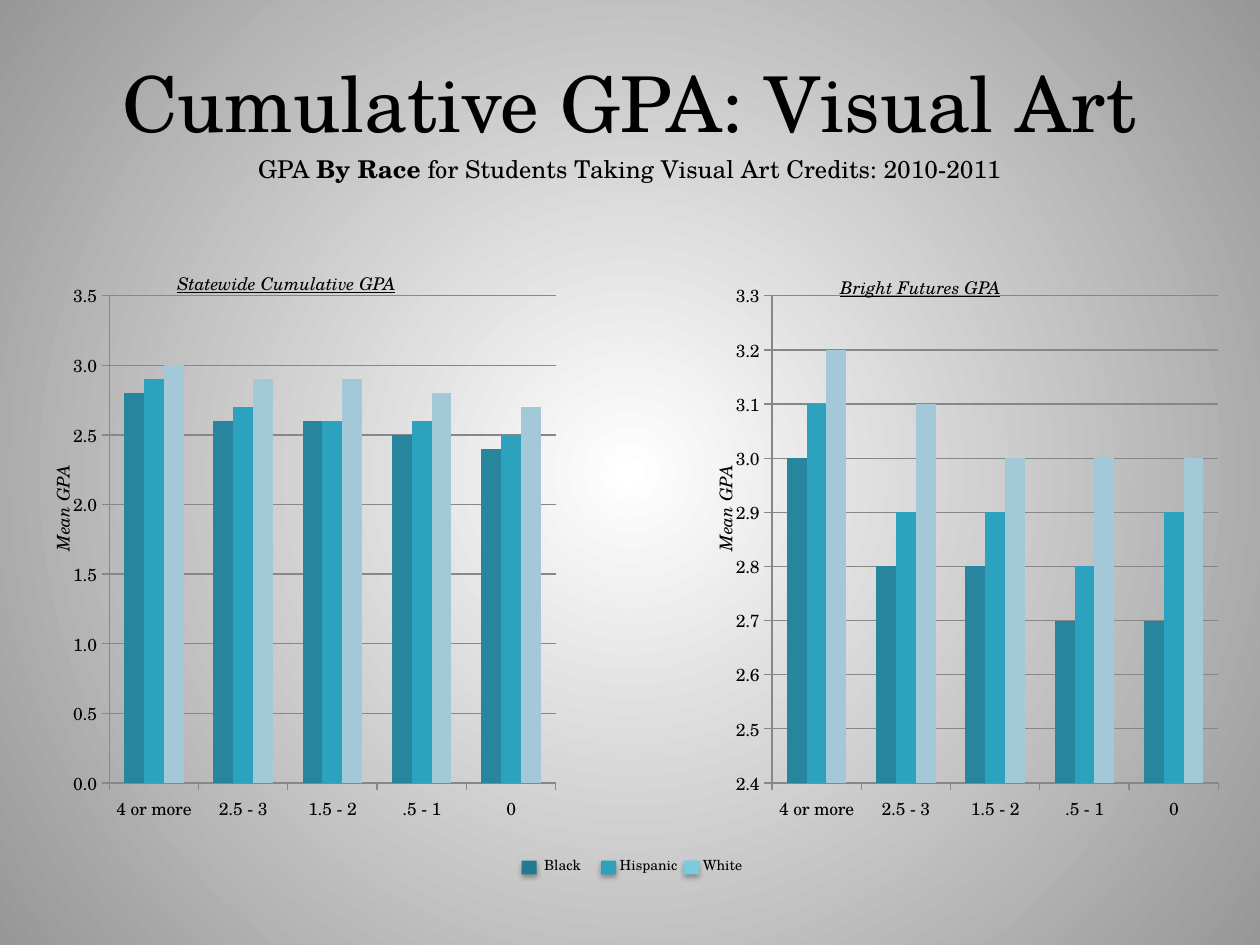
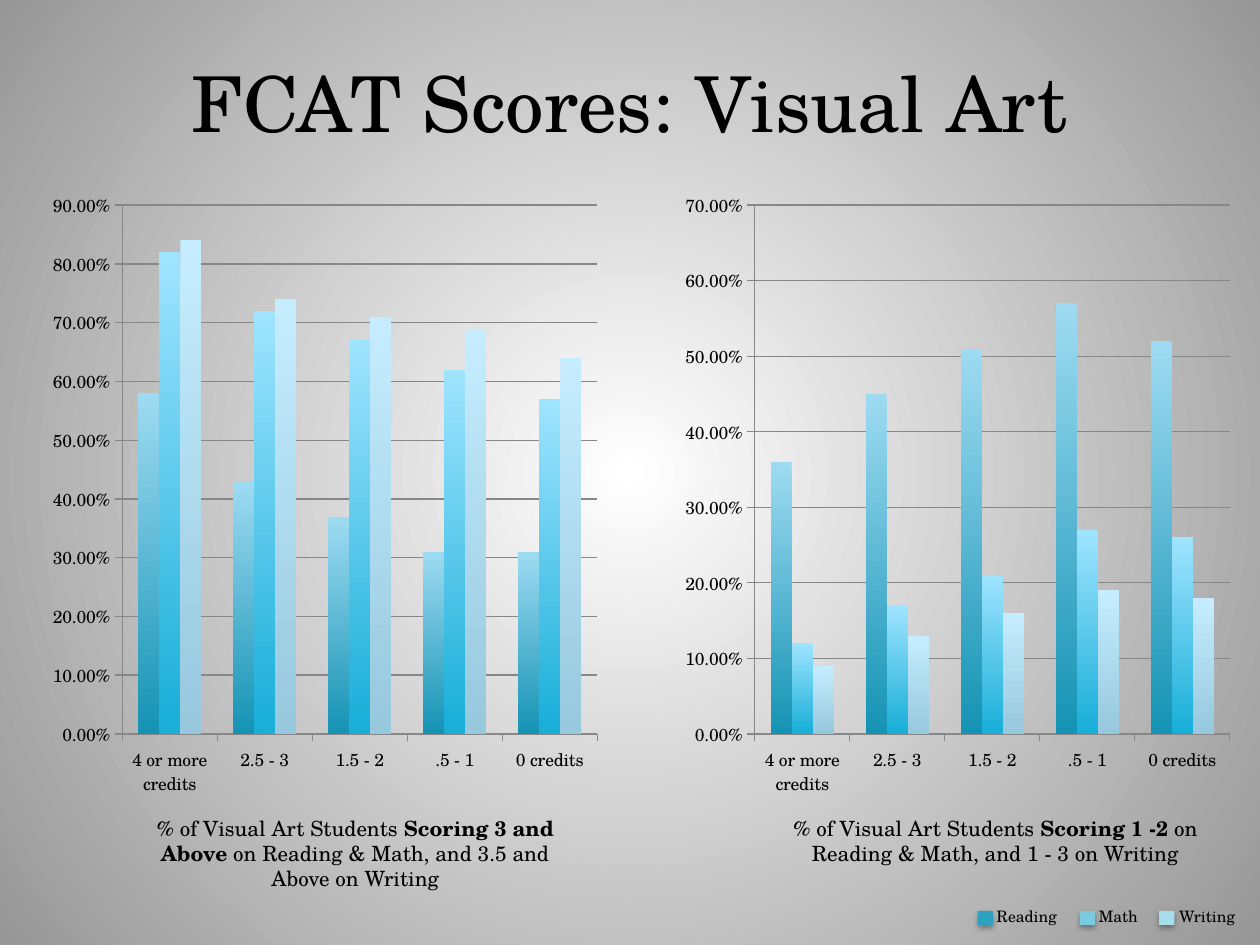
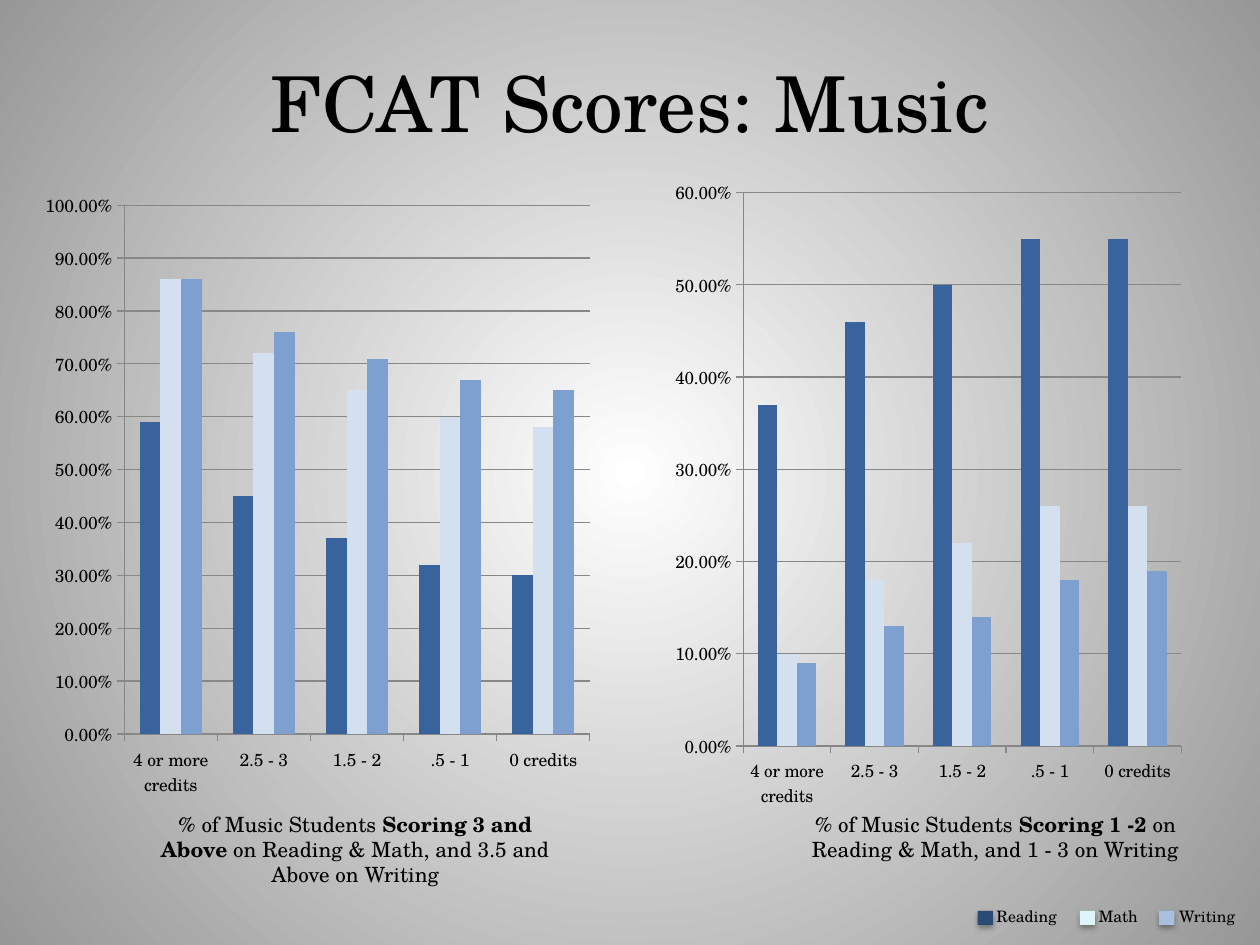
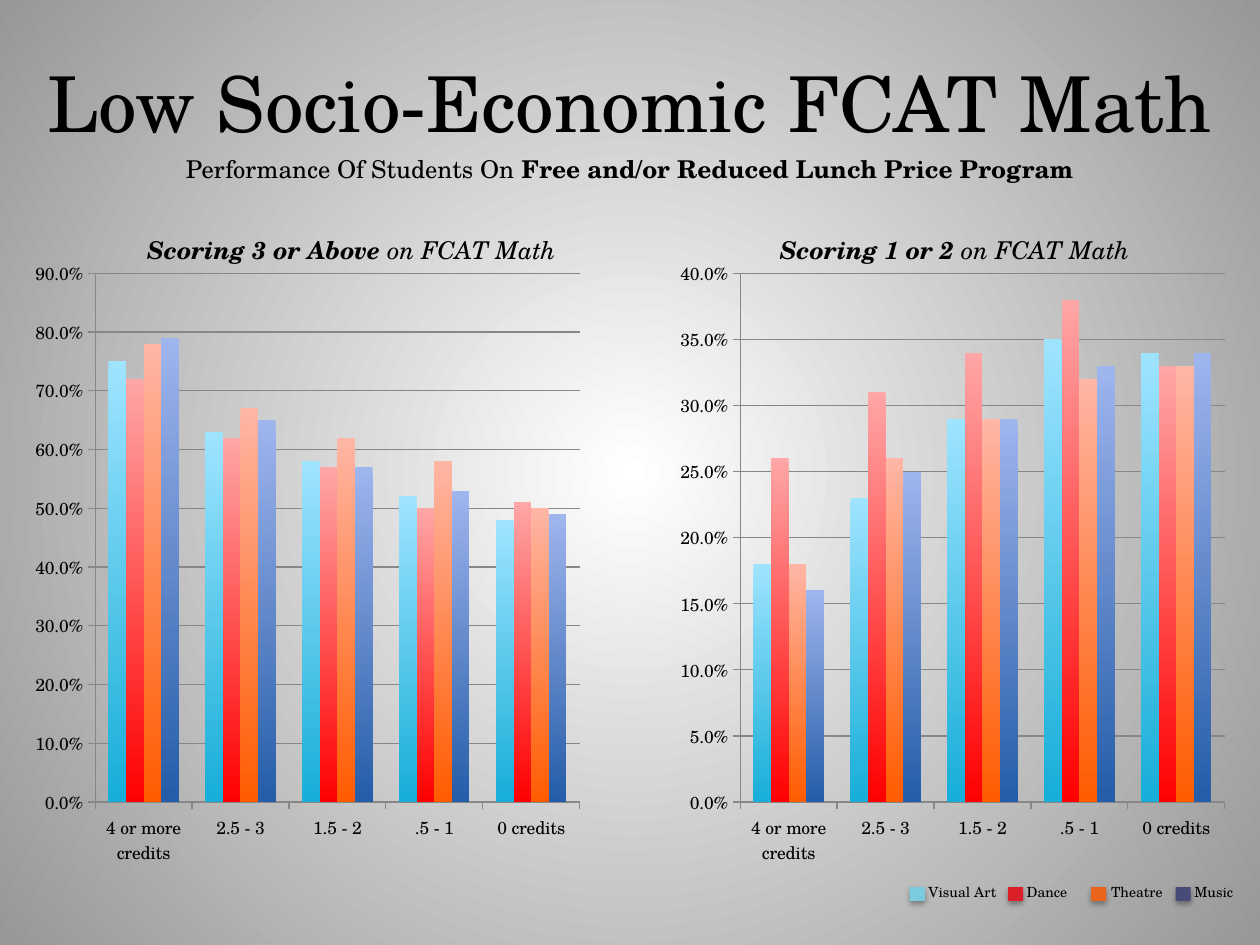
from lxml.etree import SubElement
from pptx import Presentation
from pptx.chart.data import CategoryChartData
from pptx.dml.color import RGBColor
from pptx.enum.chart import XL_CHART_TYPE, XL_TICK_MARK
from pptx.enum.shapes import MSO_SHAPE
from pptx.enum.text import MSO_ANCHOR, MSO_AUTO_SIZE, PP_ALIGN
from pptx.oxml import parse_xml
from pptx.oxml.ns import nsdecls, qn
from pptx.util import Pt

PX = 9144  # 100 px to the inch
FONT = "TeX Gyre Schola"
COLORS = {
    "text": "000000", "axis": "878787", "centre": "FFFFFF", "edge": "979797",
    "deep teal": "27869E", "dark teal": "227A8F", "teal": "2DA2BF",
    "sky": "7ACBE0", "pale sky": "A6DDEA", "mist": "A3C8D8",
    "navy": "2B4A76", "blue": "39639D", "ice": "DEF5FA", "pale blue": "D4DFEF",
    "mid blue": "7DA0D0", "light blue": "A8BFDF",
    "red": "DA1F28", "orange": "EB641B", "indigo": "474B78",
    "teal top": "9EDBF2", "teal foot": "1593B4",
    "cyan top": "9FE4FF", "cyan foot": "17AED8",
    "ice top": "C5EDFF", "ice foot": "97C8DD",
    "red top": "FFA6A6", "red foot": "FF0000",
    "orange top": "FFB6A5", "orange foot": "FF5C00",
    "blue top": "9FB5EE", "blue foot": "255DA8",
}
FORMATS = {
    "title": {"size": Pt(44)},
    "subtitle": {"size": Pt(14)},
    "heading": {"size": Pt(14), "italic": True},
    "axis title": {"size": Pt(10), "italic": True},
    "chart title": {"size": Pt(10), "italic": True, "underline": True},
    "caption": {"size": Pt(12)},
    "legend": {"size": Pt(9)},
    "small legend": {"size": Pt(8)},
}
CENTRED = {"title", "subtitle", "axis title", "caption"}
CREDITS = ["4 or more credits", "2.5 - 3", "1.5 - 2", ".5 - 1", "0 credits"]
SHORT_CREDITS = ["4 or more", "2.5 - 3", "1.5 - 2", ".5 - 1", "0"]
CYAN_BARS = ("cyan top", "cyan foot")
RACE_BARS = ["deep teal", "teal", "mist"]
ART_BARS = [("teal top", "teal foot"), CYAN_BARS, ("ice top", "ice foot")]
MUSIC_BARS = ["blue", "pale blue", "mid blue"]
SUBJECT_BARS = [CYAN_BARS, ("red top", "red foot"),
                ("orange top", "orange foot"), ("blue top", "blue foot")]
SHADOW = (
    f'<a:effectLst {nsdecls("a")}><a:outerShdw blurRad="40000" dist="23000" '
    'dir="5400000" rotWithShape="0"><a:srgbClr val="000000">'
    '<a:alpha val="35000"/></a:srgbClr></a:outerShdw></a:effectLst>'
)


def color(name):
    return RGBColor.from_string(COLORS[name])


def apply(target, values):
    for name, value in values.items():
        setattr(target, name, value)


class Deck:
    def __init__(self):
        self.presentation = Presentation()
        apply(self.presentation, {"slide_width": 1000 * PX, "slide_height": 750 * PX})
        self.slide = None
        self.paint_background()

    def paint_background(self):
        """Give the master a round gradient that every slide inherits."""
        master = self.presentation.slide_master
        fill = master.background.fill
        fill.gradient()
        for stop, name in zip(fill.gradient_stops, ("centre", "edge")):
            stop.color.rgb = color(name)
        gradient = master.element.find(".//" + qn("p:bgPr")).find(qn("a:gradFill"))
        gradient.remove(gradient.find(qn("a:lin")))
        circle = SubElement(gradient, qn("a:path"), path="circle")
        SubElement(circle, qn("a:fillToRect"), dict.fromkeys("ltrb", "50000"))

    def new_slide(self, title, box=(50, 18, 900, 125)):
        self.slide = self.presentation.slides.add_slide(self.presentation.slide_layouts[6])
        self.text(box, [title], "title")

    def text(self, box, paragraphs, style, wrap=True, rotation=0, parent=None):
        """Write paragraphs in which *asterisks* enclose bold words."""
        shape = (parent or self.slide).shapes.add_textbox(*(n * PX for n in box))
        shape.rotation = rotation
        frame = shape.text_frame
        is_title = style == "title"
        apply(frame, {
            "word_wrap": wrap,
            "auto_size": MSO_AUTO_SIZE.NONE if is_title else MSO_AUTO_SIZE.SHAPE_TO_FIT_TEXT,
            "vertical_anchor": MSO_ANCHOR.MIDDLE if is_title else MSO_ANCHOR.TOP,
        })
        for index, content in enumerate(paragraphs):
            paragraph = frame.add_paragraph() if index else frame.paragraphs[0]
            paragraph.alignment = PP_ALIGN.CENTER if style in CENTRED else PP_ALIGN.LEFT
            for position, words in enumerate(content.split("*")):
                if words:
                    run = paragraph.add_run()
                    run.text = words
                    apply(run.font, {"name": FONT, "bold": position % 2 == 1, **FORMATS[style]})
                    run.font.color.rgb = color("text")

    def chart(self, left, top, size, categories, values, bars, scale, number_format, plot=None):
        """Draw clustered columns; scale is minimum, maximum and step."""
        data = CategoryChartData(number_format=number_format)
        data.categories = categories
        for number, row in enumerate(values, 1):
            data.add_series(f"Series {number}", row)
        box = (left, top, *size)
        chart = self.slide.shapes.add_chart(
            XL_CHART_TYPE.COLUMN_CLUSTERED, *(n * PX for n in box), data).chart
        apply(chart, {"has_legend": False, "has_title": False})
        apply(chart.font, {"name": FONT, "size": Pt(18)})
        chart.font.color.rgb = color("text")
        apply(chart.plots[0], {"gap_width": 150, "overlap": 0, "vary_by_categories": False})
        for series, bar in zip(chart.plots[0].series, bars):
            self.fill_bars(series.format.fill, bar)

        minimum, maximum, step = scale
        apply(chart.value_axis, {"minimum_scale": minimum, "maximum_scale": maximum,
                                 "major_unit": step, "has_major_gridlines": True})
        apply(chart.value_axis.tick_labels,
              {"number_format": number_format, "number_format_is_linked": False})
        for axis in (chart.category_axis, chart.value_axis):
            axis.major_tick_mark = XL_TICK_MARK.OUTSIDE
            axis.tick_labels.font.size = Pt(10)
            self.axis_line(axis.format.line)
        self.axis_line(chart.value_axis.major_gridlines.format.line)
        if plot:
            self.place_plot(chart, plot)

    def fill_bars(self, fill, bar):
        """Fill with one colour, or from a top to a foot colour."""
        if isinstance(bar, str):
            fill.solid()
            fill.fore_color.rgb = color(bar)
            return
        fill.gradient()
        fill.gradient_angle = 270
        for stop, name in zip(fill.gradient_stops, bar):
            stop.color.rgb = color(name)

    def axis_line(self, line):
        line.width = Pt(0.75)
        line.color.rgb = color("axis")

    def place_plot(self, chart, plot):
        """Fix the inner plot area as fractions of the chart."""
        area = chart.element.find(".//" + qn("c:plotArea"))
        for old in area.findall(qn("c:layout")):
            area.remove(old)
        marks = {"layoutTarget": "inner", "xMode": "edge", "yMode": "edge",
                 **dict(zip("xywh", map(str, plot)))}
        children = "".join(f'<c:{tag} val="{value}"/>' for tag, value in marks.items())
        area.insert(0, parse_xml(
            f'<c:layout {nsdecls("c")}><c:manualLayout>{children}</c:manualLayout></c:layout>'))

    def legend(self, top, style, entries):
        """Group swatches and labels; an entry is label, colour, swatch left, label left, width."""
        group = self.slide.shapes.add_group_shape()
        for label, name, swatch_left, label_left, width in entries:
            box = (swatch_left, top, 12, 11)
            swatch = group.shapes.add_shape(MSO_SHAPE.RECTANGLE, *(n * PX for n in box))
            swatch.fill.solid()
            swatch.fill.fore_color.rgb = color(name)
            swatch.line.fill.background()
            swatch.element.spPr.append(parse_xml(SHADOW))
            self.text((label_left, top - 8, width, 24), [label], style, parent=group)


def gpa_slide(deck):
    deck.new_slide("Cumulative GPA: Visual Art")
    deck.text((50, 117, 900, 34),
              ["GPA *By Race* for Students Taking Visual Art Credits: 2010-2011"], "subtitle")
    statewide = [(2.8, 2.6, 2.6, 2.5, 2.4), (2.9, 2.7, 2.6, 2.6, 2.5), (3, 2.9, 2.9, 2.8, 2.7)]
    bright = [(3, 2.8, 2.8, 2.7, 2.7), (3.1, 2.9, 2.9, 2.8, 2.9), (3.2, 3.1, 3, 3, 3)]
    for left, values, scale, title, title_left, title_top in (
            (50, statewide, (0, 3.5, 0.5), "Statewide Cumulative GPA", 131, 212),
            (576, bright, (2.4, 3.3, 0.1), "Bright Futures GPA", 657, 215)):
        deck.chart(left, 216, (399, 444), SHORT_CREDITS, values, RACE_BARS, scale, "0.0")
        deck.text((title_left, title_top, 318, 27), [title], "chart title")
        deck.text((left - 174, 390, 348, 27), ["Mean GPA"], "axis title", rotation=270)
    deck.legend(683, "small legend", [
        ("Black", "dark teal", 414, 422, 51),
        ("Hispanic", "teal", 477, 482, 132),
        ("White", "sky", 543, 548, 132)])


def scores_slide(deck, subject, lefts, values, scales, bars, swatches, caption_top, plots):
    deck.new_slide(f"FCAT Scores: {subject}")
    for left, rows, scale, plot in zip(lefts, values, scales, plots):
        deck.chart(left, 143, (450, 499), CREDITS, rows, bars, scale, "0.00%", plot)
    students = f"% of {subject} Students"
    deck.text((107, caption_top, 350, 71),
              [f"{students} *Scoring 3 and Above* on Reading & Math, and 3.5 and",
               "Above on Writing"], "caption")
    deck.text((615, caption_top, 350, 50),
              [f"{students} *Scoring 1 -2* on Reading & Math, and 1 - 3 on Writing"], "caption")
    places = [("Reading", 776, 781, 132), ("Math", 857, 862, 55), ("Writing", 920, 926, 74)]
    deck.legend(723, "legend", [(label, name, *place)
                                for (label, *place), name in zip(places, swatches)])


def lunch_program_slide(deck):
    deck.new_slide("Low Socio-Economic FCAT Math", (24, 18, 952, 125))
    deck.text((50, 117, 900, 57),
              ["Performance Of Students On *Free and/or Reduced Lunch Price Program*"], "subtitle")
    passing = [(0.75, 0.63, 0.58, 0.52, 0.48), (0.72, 0.62, 0.57, 0.5, 0.51),
               (0.78, 0.67, 0.62, 0.58, 0.5), (0.79, 0.65, 0.57, 0.53, 0.49)]
    low = [(0.18, 0.23, 0.29, 0.35, 0.34), (0.26, 0.31, 0.34, 0.38, 0.33),
           (0.18, 0.26, 0.29, 0.32, 0.33), (0.16, 0.25, 0.29, 0.33, 0.34)]
    for left, values, scale in ((19, passing, (0, 0.9, 0.1)), (531, low, (0, 0.4, 0.05))):
        deck.chart(left, 197, (450, 499), CREDITS, values, SUBJECT_BARS, scale, "0.0%")
    deck.text((107, 182, 352, 34), ["*Scoring 3 or Above* on FCAT Math"], "heading", wrap=False)
    deck.text((609, 182, 302, 34), ["*Scoring 1 or 2* on FCAT Math"], "heading")
    deck.legend(704, "small legend", [
        ("Visual Art", "sky", 722, 727, 132),
        ("Dance", "red", 800, 805, 132),
        ("Theatre", "orange", 866, 872, 132),
        ("Music", "indigo", 933, 938, 132)])


def main():
    deck = Deck()
    gpa_slide(deck)
    scores_slide(
        deck, "Visual Art", (33, 535),
        ([(0.58, 0.43, 0.37, 0.31, 0.31), (0.82, 0.72, 0.67, 0.62, 0.57),
          (0.84, 0.74, 0.71, 0.69, 0.64)],
         [(0.36, 0.45, 0.51, 0.57, 0.52), (0.12, 0.17, 0.21, 0.27, 0.26),
          (0.09, 0.13, 0.16, 0.19, 0.18)]),
        ((0, 0.9, 0.1), (0, 0.7, 0.1)), ART_BARS,
        ("teal", "sky", "pale sky"), 642, (None, None))
    scores_slide(
        deck, "Music", (27, 536),
        ([(0.59, 0.45, 0.37, 0.32, 0.3), (0.86, 0.72, 0.65, 0.6, 0.58),
          (0.86, 0.76, 0.71, 0.67, 0.65)],
         [(0.37, 0.46, 0.5, 0.55, 0.55), (0.1, 0.18, 0.22, 0.26, 0.26),
          (0.09, 0.13, 0.14, 0.18, 0.19)]),
        ((0, 1, 0.1), (0, 0.6, 0.1)), MUSIC_BARS,
        ("navy", "ice", "light blue"), 639, (None, (0.1, 0.02, 0.79, 0.88)))
    lunch_program_slide(deck)
    deck.presentation.save("out.pptx")


if __name__ == "__main__":
    main()
